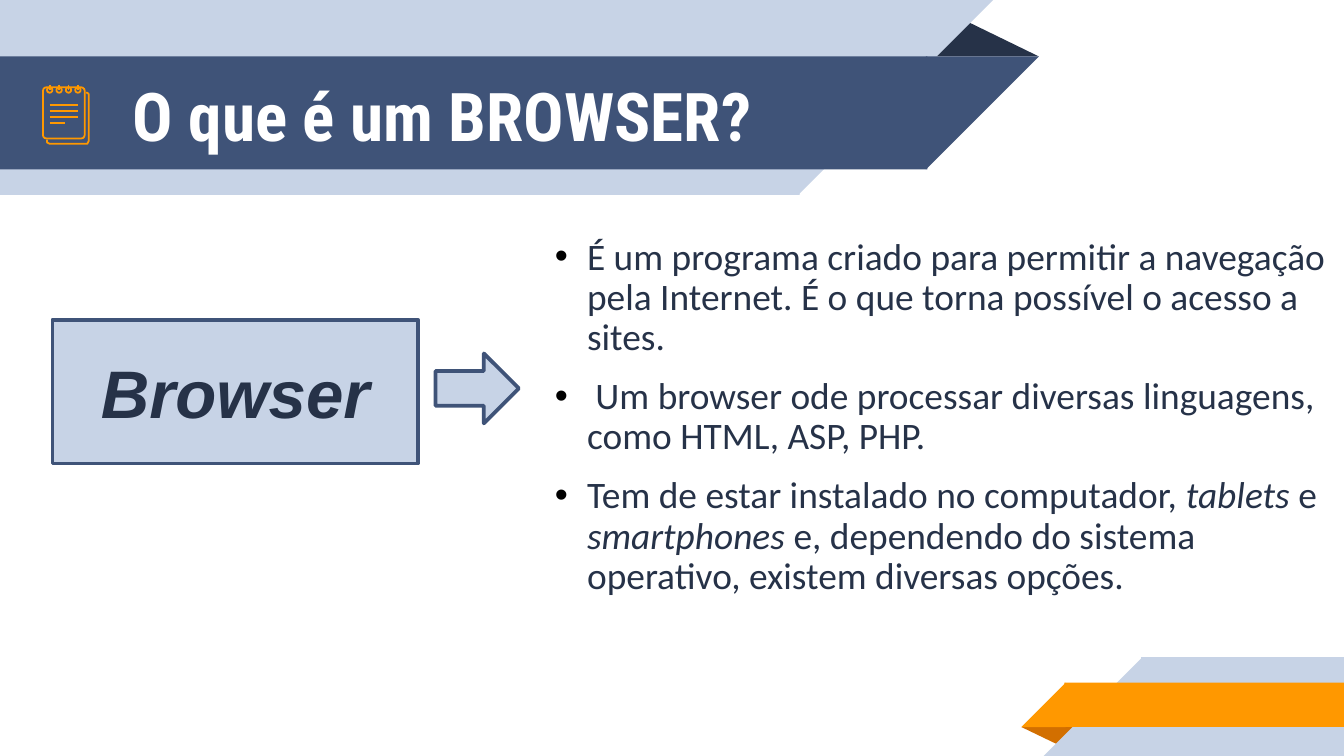
from lxml import etree
from pptx import Presentation
from pptx import util as u
from pptx.dml.color import RGBColor
from pptx.enum import shapes, text
from pptx.oxml import ns

WHITE = RGBColor(0xFF, 0xFF, 0xFF)
BLACK = RGBColor(0x00, 0x00, 0x00)
NAVY = RGBColor(0x26, 0x32, 0x48)
BLUE = RGBColor(0x3F, 0x53, 0x78)
PALE = RGBColor(0xC7, 0xD3, 0xE6)
ORANGE = RGBColor(0xFF, 0x98, 0x00)
RUST = RGBColor(0xD2, 0x6F, 0x00)

SHAPE = shapes.MSO_SHAPE
MIDDLE = text.MSO_ANCHOR.MIDDLE


class SlideBuilder:
    icon_width = u.Pt(0.96)
    outline_width = u.Pt(2)
    overlap = 0.01

    def __init__(self, presentation):
        self.slide = presentation.slides.add_slide(presentation.slide_layouts[6])

    def style(self, shape, fill, line, width):
        shape.shadow.inherit = False
        if fill is None:
            shape.fill.background()
        else:
            shape.fill.solid()
            shape.fill.fore_color.rgb = fill
        if line is None:
            shape.line.fill.background()
        else:
            shape.line.color.rgb = line
            shape.line.width = width

    def shape(self, kind, box, fill=None, line=None, width=outline_width, rotation=0):
        shape = self.slide.shapes.add_shape(kind, *map(u.Inches, box))
        self.style(shape, fill, line, width)
        shape.rotation = rotation
        return shape

    def fold(self, box, fill, rotation=0):
        triangle = self.shape(SHAPE.ISOSCELES_TRIANGLE, box, fill, rotation=rotation)
        triangle.adjustments[0] = 0.324

    def left_band(self, top, length, height, fill):
        self.shape(SHAPE.RECTANGLE, (0, top, length + self.overlap, height), fill)
        self.shape(SHAPE.RIGHT_TRIANGLE, (length, top, height, height), fill, rotation=90)

    def right_band(self, left, top, height, fill):
        start = left - self.overlap
        self.shape(SHAPE.RECTANGLE, (start, top, 10 - start, height), fill)
        self.shape(SHAPE.RIGHT_TRIANGLE, (left - height, top, height, height), fill, rotation=270)

    def icon_outline(self, kind, box):
        return self.shape(kind, box, line=ORANGE, width=self.icon_width)

    def icon_path(self, points):
        points = [(u.Inches(x), u.Inches(y)) for x, y in points]
        builder = self.slide.shapes.build_freeform(*points[0])
        builder.add_line_segments(points[1:], close=False)
        self.style(builder.convert_to_shape(), None, ORANGE, self.icon_width)

    def icon_line(self, *ends):
        line = self.slide.shapes.add_connector(
            shapes.MSO_CONNECTOR.STRAIGHT, *map(u.Inches, ends))
        line.line.color.rgb = ORANGE
        line.line.width = self.icon_width
        etree.SubElement(line._element.spPr, ns.qn("a:effectLst"))

    def text_box(self, box):
        frame = self.slide.shapes.add_textbox(*map(u.Inches, box)).text_frame
        frame.word_wrap = True
        return frame

    def run(self, paragraph, words, size, font, color, bold=False, italic=False):
        run = paragraph.add_run()
        run.text = words
        run.font.size = u.Pt(size)
        run.font.name = font
        run.font.color.rgb = color
        run.font.bold = bold
        run.font.italic = italic

    def bullet(self, paragraph):
        properties = paragraph._p.get_or_add_pPr()
        properties.set("marL", str(u.Inches(0.24)))
        properties.set("indent", str(-u.Inches(0.24)))
        color = etree.SubElement(properties, ns.qn("a:buClr"))
        etree.SubElement(color, ns.qn("a:srgbClr"), val=str(BLACK))
        etree.SubElement(properties, ns.qn("a:buFont"), typeface="Arial")
        etree.SubElement(properties, ns.qn("a:buChar"), char="•")

    def bullet_list(self, box, items):
        frame = self.text_box(box)
        for index, item in enumerate(items):
            paragraph = frame.add_paragraph() if index else frame.paragraphs[0]
            self.bullet(paragraph)
            paragraph.line_spacing = 0.9
            if index:
                paragraph.space_before = u.Pt(10)
            for words, italic in item:
                self.run(paragraph, words, 20, "Calibri", NAVY, italic=italic)

    def title(self, box, words):
        frame = self.text_box(box)
        frame.vertical_anchor = MIDDLE
        frame.margin_top = frame.margin_bottom = u.Inches(0.1)
        self.run(frame.paragraphs[0], words, 36, "Roboto Condensed", WHITE, bold=True)

    def label_box(self, box, words):
        frame = self.shape(SHAPE.RECTANGLE, box, PALE, BLUE).text_frame
        frame.vertical_anchor = MIDDLE
        paragraph = frame.paragraphs[0]
        paragraph.alignment = text.PP_ALIGN.CENTER
        self.run(paragraph, words, 36, "Arial", NAVY, bold=True, italic=True)

    def notepad(self):
        self.icon_path([(0.35, 1.04), (0.35, 1.06), (0.37, 1.07), (0.65, 1.07),
                        (0.66, 1.05), (0.66, 0.7), (0.65, 0.69), (0.64, 0.69)])
        page = self.icon_outline(SHAPE.ROUNDED_RECTANGLE, (0.32, 0.65, 0.31, 0.38))
        page.adjustments[0] = 0.08
        for row, length in enumerate((0.21, 0.21, 0.21, 0.11)):
            y = 0.78 + row * 0.045
            self.icon_line(0.37, y, 0.37 + length, y)
        for ring in range(4):
            x = 0.37 + ring * 0.07
            self.icon_outline(SHAPE.OVAL, (x - 0.02, 0.65, 0.04, 0.04))
            self.icon_line(x, 0.63, x, 0.67)


def main():
    presentation = Presentation()
    presentation.slide_width = u.Inches(10)
    presentation.slide_height = u.Inches(10 * 9 / 16)
    builder = SlideBuilder(presentation)

    builder.fold((6.88, 0.14, 0.85, 0.28), NAVY)
    builder.left_band(0, 5.94, 1.45, PALE)
    builder.left_band(0.42, 6.89, 0.84, BLUE)
    builder.fold((7.6, 5.41, 0.43, 0.14), RUST, rotation=180)
    builder.right_band(8.5, 4.89, 0.74, PALE)
    builder.right_band(7.93, 5.08, 0.33, ORANGE)

    builder.title((0.89, 0.43, 5.75, 0.84), "O que é um BROWSER?")
    builder.notepad()
    builder.label_box((0.39, 2.38, 2.72, 1.07), "Browser")
    builder.shape(SHAPE.RIGHT_ARROW, (3.24, 2.63, 0.62, 0.52), PALE, BLUE)
    builder.bullet_list((4.03, 1.72, 5.97, 2.8), [
        [("É um programa criado para permitir a navegação pela Internet. "
          "É o que torna possível o acesso a sites.", False)],
        [(" Um browser ode processar diversas linguagens, como HTML, ASP, PHP.", False)],
        [("Tem de estar instalado no computador, ", False),
         ("tablets ", True),
         ("e ", False),
         ("smartphones ", True),
         ("e, dependendo do sistema operativo, existem diversas opções.", False)],
    ])
    presentation.save("out.pptx")


if __name__ == "__main__":
    main()
